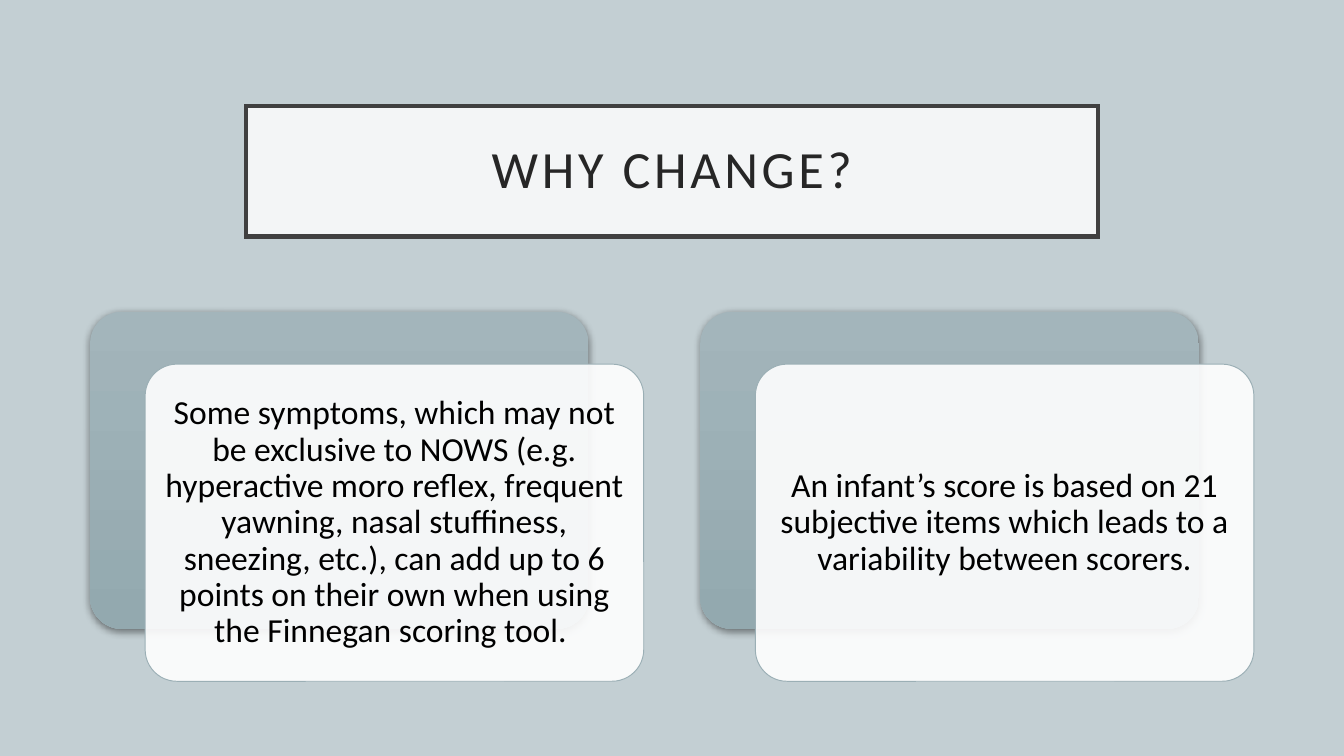
from dataclasses import dataclass

from lxml.etree import SubElement
from pptx import Presentation
from pptx.dml.color import RGBColor
from pptx.enum.shapes import MSO_SHAPE as Preset
from pptx.enum.text import MSO_ANCHOR as Anchor, PP_ALIGN as Align
from pptx.oxml.ns import qn
from pptx.util import Inches, Pt


@dataclass(frozen=True)
class Theme:
    """Colours, font and type sizes of the deck."""
    background: str = "C3CFD3"
    panel: str = "FFFFFF"
    frame: str = "404040"
    title_ink: str = "262626"
    body_ink: str = "000000"
    edge: str = "9BAFB5"
    gradient_top: str = "A3B5BB"
    gradient_bottom: str = "93A9AF"
    shadow: str = "000000"
    font: str = "Calibri"
    title_size: int = 28
    body_size: int = 18


THEME = Theme()
REASONS = [
    "Some symptoms, which may not be exclusive to NOWS (e.g. hyperactive moro "
    "reflex, frequent yawning, nasal stuffiness, sneezing, etc.), can add up to "
    "6 points on their own when using the Finnegan scoring tool. ",
    "An infant’s score is based on 21 subjective items which leads to a "
    "variability between scorers.",
]


def rgb(value):
    """Turn a hex string into a colour."""
    return RGBColor.from_string(value)


def add_shape(page, preset, box):
    """Add a shape without a shadow at a box given in inches."""
    shape = page.shapes.add_shape(preset, *map(Inches, box))
    shape.shadow.inherit = False
    if preset == Preset.ROUNDED_RECTANGLE:
        shape.adjustments[0] = 0.1
    return shape


def add_panel(page, preset, box, opacity, line_colour, line_width):
    """Add a translucent white shape with a sharp-cornered outline."""
    panel = add_shape(page, preset, box)
    panel.fill.solid()
    panel.fill.fore_color.rgb = rgb(THEME.panel)
    colour = panel.fill._xPr.find(qn("a:solidFill"))[0]
    SubElement(colour, qn("a:alpha"), val=str(opacity * 1000))
    panel.line.color.rgb = rgb(line_colour)
    panel.line.width = Pt(line_width)
    SubElement(panel.line._get_or_add_ln(), qn("a:miter"), lim="800000")
    return panel


def write_text(shape, text, size, colour, inset, spacing=0):
    """Write one centred paragraph in the middle of a shape."""
    frame = shape.text_frame
    frame.word_wrap = True
    frame.vertical_anchor = Anchor.MIDDLE
    frame.margin_left = frame.margin_right = Inches(inset)
    frame.margin_top = frame.margin_bottom = Inches(inset)
    para = frame.paragraphs[0]
    para.alignment = Align.CENTER
    para.line_spacing = 0.9
    span = para.add_run()
    span.text = text
    span.font.name = THEME.font
    span.font.size = Pt(size)
    span.font.color.rgb = rgb(colour)
    if spacing:
        span.font._element.set("spc", str(spacing * 100))


def add_title(page, box, text):
    """Place the framed title."""
    panel = add_panel(page, Preset.RECTANGLE, box, 80, THEME.frame, 2.5)
    write_text(panel, text, THEME.title_size, THEME.title_ink, 0.2, spacing=2)


def add_shadow(shape):
    """Give a shape a soft shadow that falls straight down."""
    effects = shape._element.spPr.find(qn("a:effectLst"))
    shadow = SubElement(effects, qn("a:outerShdw"), blurRad=str(Pt(4.4)),
                        dist=str(Pt(1.2)), dir="5400000", rotWithShape="0")
    colour = SubElement(shadow, qn("a:srgbClr"), val=THEME.shadow)
    SubElement(colour, qn("a:alpha"), val="45000")


def add_reason(page, box, text):
    """Place a gradient card with a text card offset over it inside the box."""
    left, top, width, height = box
    shift_x, shift_y, inset = 0.41, 0.39, 0.07
    card_width, card_height = width - shift_x, height - shift_y
    back = add_shape(page, Preset.ROUNDED_RECTANGLE,
                     (left, top, card_width, card_height))
    back.fill.gradient()
    back.fill.gradient_angle = 270
    ends = (THEME.gradient_top, THEME.gradient_bottom)
    for position, (stop, colour) in enumerate(zip(back.fill.gradient_stops, ends)):
        stop.color.rgb = rgb(colour)
        stop.position = position
    back.line.fill.background()
    add_shadow(back)
    front_left, front_top = left + shift_x, top + shift_y
    add_panel(page, Preset.ROUNDED_RECTANGLE,
              (front_left, front_top, card_width, card_height), 90, THEME.edge, 0.5)
    label_box = (front_left + inset, front_top + inset,
                 card_width - 2 * inset, card_height - 2 * inset)
    label = page.shapes.add_textbox(*map(Inches, label_box))
    write_text(label, text, THEME.body_size, THEME.body_ink, inset)


def add_reasons(page, box, reasons, gap):
    """Share the box among the reasons in equal columns."""
    left, top, width, height = box
    column = (width - gap * (len(reasons) - 1)) / len(reasons)
    for index, reason in enumerate(reasons):
        add_reason(page, (left + index * (column + gap), top, column, height), reason)


def main():
    """Build and save the deck."""
    deck = Presentation()
    deck.slide_width = Inches(10)
    deck.slide_height = deck.slide_width * 9 // 16
    page = deck.slides.add_slide(deck.slide_layouts[6])
    page.background.fill.solid()
    page.background.fill.fore_color.rgb = rgb(THEME.background)
    add_title(page, (1.83, 0.79, 6.34, 0.97), "WHY CHANGE?")
    add_reasons(page, (0.67, 2.32, 8.66, 2.75), REASONS, gap=0.42)
    deck.save("out.pptx")


if __name__ == "__main__":
    main()
